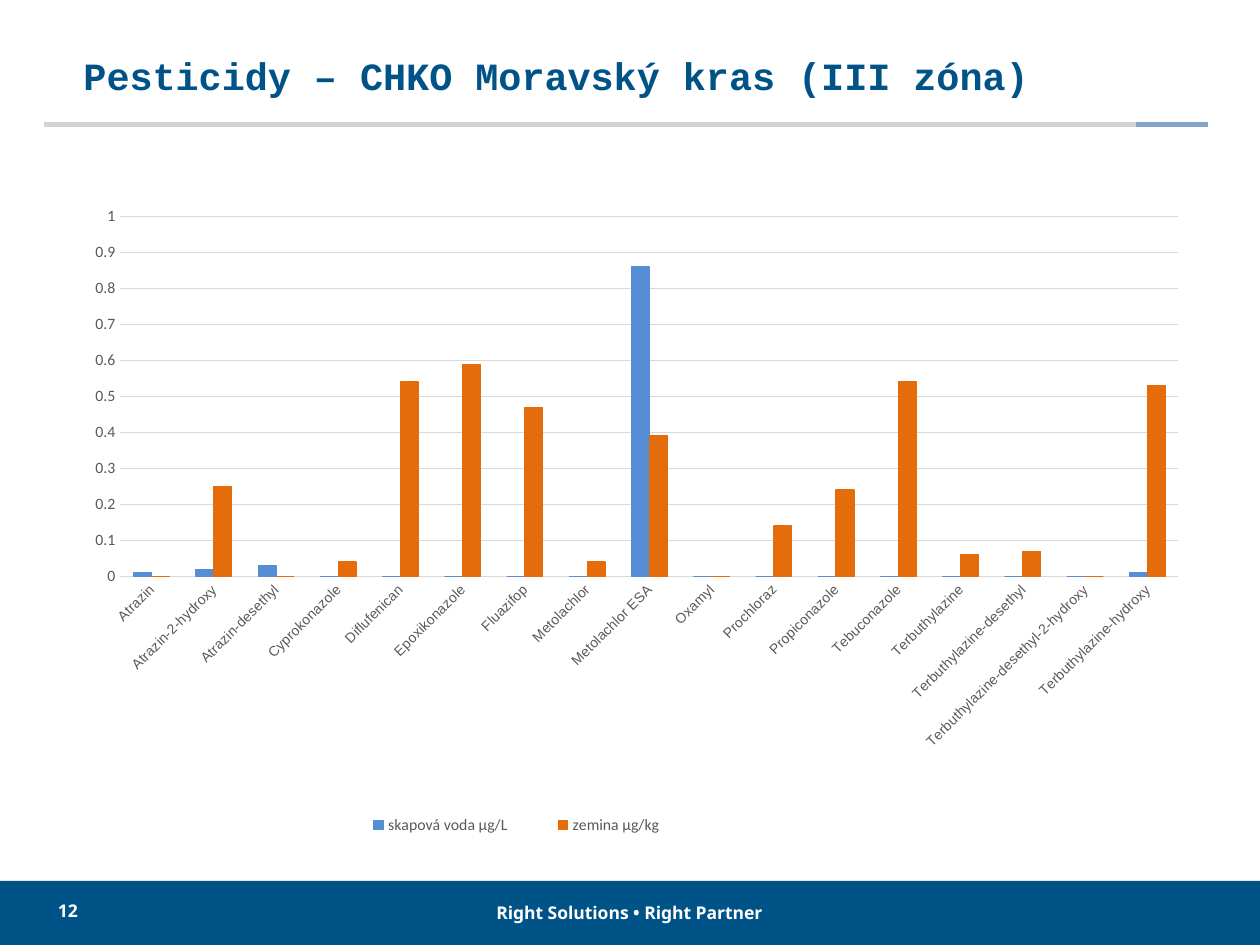
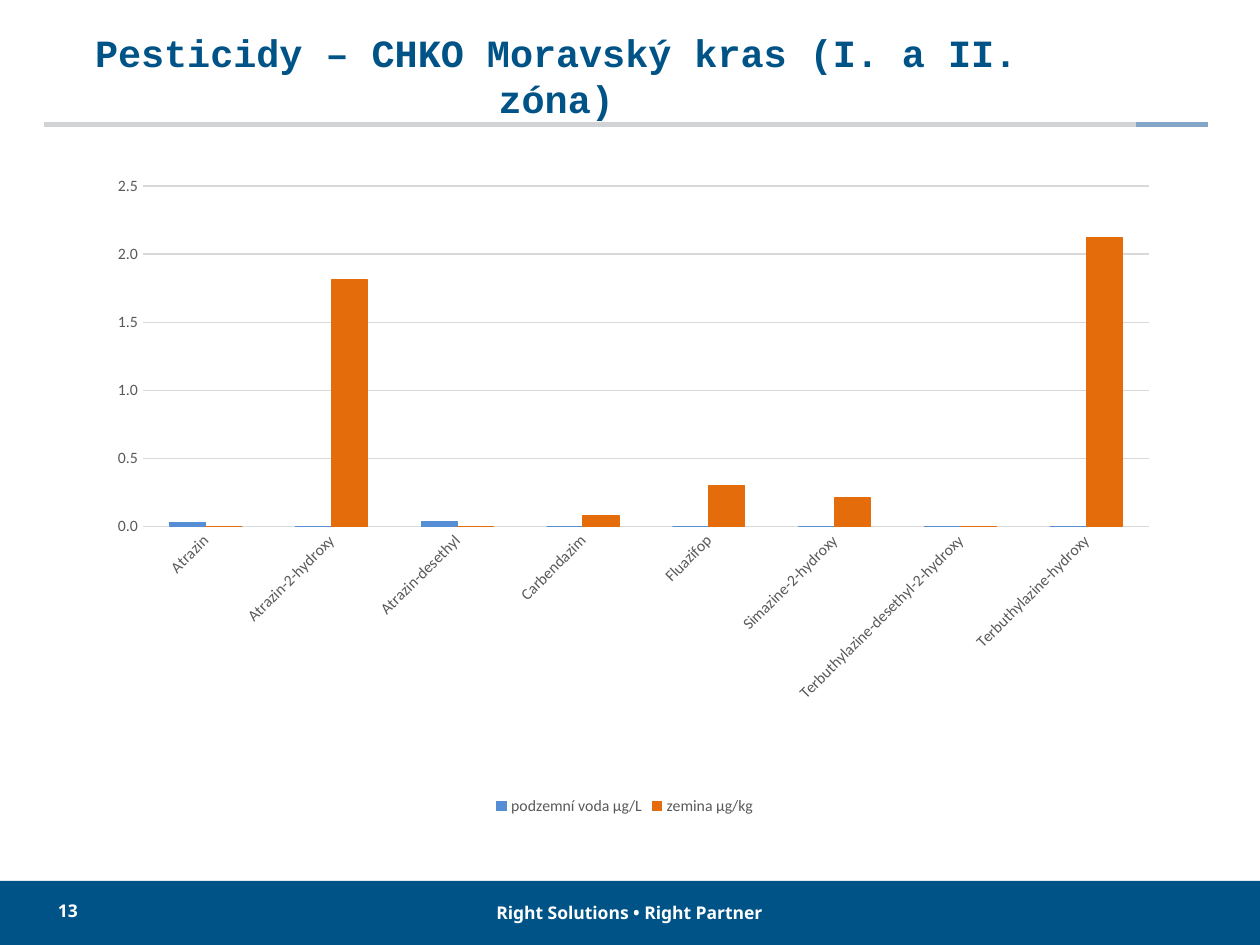
from lxml.etree import SubElement
from pptx import Presentation
from pptx.chart.data import CategoryChartData
from pptx.dml.color import RGBColor
from pptx.enum.chart import XL_CHART_TYPE, XL_LEGEND_POSITION, XL_TICK_MARK
from pptx.enum.shapes import MSO_CONNECTOR, MSO_SHAPE
from pptx.enum.text import MSO_ANCHOR, MSO_AUTO_SIZE, PP_ALIGN
from pptx.oxml import parse_xml
from pptx.oxml.ns import nsdecls, qn
from pptx.util import Inches, Pt

CELL = 0.1  # inches; the slide is 100 columns by 75 rows
COLS, ROWS = 100, 75
HEX = {
    "navy": "005387", "sky": "83A5C8", "rule": "D1D3D4", "white": "FFFFFF",
    "water": "558ED5", "soil": "E46C0A", "label": "595959", "grid": "D9D9D9",
}

ZONE_3 = {
    "Atrazin": (0.01, 0),
    "Atrazin-2-hydroxy": (0.02, 0.25),
    "Atrazin-desethyl": (0.03, 0),
    "Cyprokonazole": (0, 0.04),
    "Diflufenican": (0, 0.54),
    "Epoxikonazole": (0, 0.59),
    "Fluazifop": (0, 0.47),
    "Metolachlor": (0, 0.04),
    "Metolachlor ESA": (0.86, 0.39),
    "Oxamyl": (0, 0),
    "Prochloraz": (0, 0.14),
    "Propiconazole": (0, 0.24),
    "Tebuconazole": (0, 0.54),
    "Terbuthylazine": (0, 0.06),
    "Terbuthylazine-desethyl": (0, 0.07),
    "Terbuthylazine-desethyl-2-hydroxy": (0, 0),
    "Terbuthylazine-hydroxy": (0.01, 0.53),
}
ZONES_1_2 = {
    "Atrazin": (0.03, 0),
    "Atrazin-2-hydroxy": (0, 1.81),
    "Atrazin-desethyl": (0.04, 0),
    "Carbendazim": (0, 0.08),
    "Fluazifop": (0, 0.3),
    "Simazine-2-hydroxy": (0, 0.21),
    "Terbuthylazine-desethyl-2-hydroxy": (0, 0),
    "Terbuthylazine-hydroxy": (0, 2.12),
}


def ink(name):
    return RGBColor.from_string(HEX[name])


def cells(*counts):
    return [Inches(count * CELL) for count in counts]


def style(font, name, size, color, bold=False):
    font.name, font.size, font.bold = name, Pt(size), bold
    font.color.rgb = ink(color)


def place(parent, index, box, inner=False):
    """Fix a chart part at box: left, top, width, height as chart shares."""
    for old in parent.findall(qn("c:layout")):
        parent.remove(old)
    layout = parse_xml(f"<c:layout {nsdecls('c')}><c:manualLayout/></c:layout>")
    parent.insert(index, layout)
    rules = [("layoutTarget", "inner")] if inner else []
    rules += [("xMode", "edge"), ("yMode", "edge"), *zip("xywh", box)]
    for tag, val in rules:
        SubElement(layout[0], qn(f"c:{tag}")).set("val", str(val))


class Deck:
    def __init__(self):
        self.file = Presentation()
        self.file.slide_width, self.file.slide_height = cells(COLS, ROWS)
        self.slide = None

    def start(self, title, page):
        self.slide = self.file.slides.add_slide(self.file.slide_layouts[5])
        self.rule(3.5, 95.9, "rule")
        self.rule(90.2, 95.9, "sky")
        self.band(69.9)
        self.label(str(page), 4.6, 71.4, PP_ALIGN.LEFT)
        self.label("Right Solutions • Right Partner", 35.8, 71.6, PP_ALIGN.CENTER)
        self.title(title)

    def title(self, text):
        shape = self.slide.shapes.title
        shape.left, shape.top, shape.width, shape.height = cells(3.5, 3.6, 81.3, 4.7)
        frame = shape.text_frame
        frame.text = text
        frame.auto_size = MSO_AUTO_SIZE.NONE
        frame.vertical_anchor = MSO_ANCHOR.MIDDLE
        para = frame.paragraphs[0]
        para.alignment = PP_ALIGN.CENTER
        style(para.font, "Courier New", 22, "navy", True)

    def rule(self, left, right, color):
        line = self.slide.shapes.add_connector(
            MSO_CONNECTOR.STRAIGHT, *cells(left, 9.9, right, 9.9))
        line.line.color.rgb = ink(color)
        line.line.width = Pt(3)
        SubElement(line._element.spPr, qn("a:effectLst"))

    def band(self, top):
        shape = self.slide.shapes.add_shape(
            MSO_SHAPE.RECTANGLE, *cells(0, top, COLS, ROWS - top))
        shape.shadow.inherit = False
        shape.fill.solid()
        shape.fill.fore_color.rgb = ink("navy")
        shape.line.fill.background()

    def label(self, text, left, top, align):
        box = self.slide.shapes.add_textbox(*cells(left, top, 28.3, 1.7))
        frame = box.text_frame
        frame.word_wrap = True
        frame.margin_left = frame.margin_right = 0
        frame.margin_top = frame.margin_bottom = 0
        frame.text = text
        para = frame.paragraphs[0]
        para.alignment = align
        style(para.font, "Noto Sans", 10, "white", True)

    def chart(self, box, water, rows, plot, top, step, form, face, size, key=None):
        """Draw water and soil columns; plot and key are shares of the chart."""
        data = CategoryChartData()
        data.categories = list(rows)
        for name, vals in zip((water, "zemina µg/kg"), zip(*rows.values())):
            data.add_series(name, vals)
        chart = self.slide.shapes.add_chart(
            XL_CHART_TYPE.COLUMN_CLUSTERED, *cells(*box), data).chart
        chart.has_title = False
        style(chart.font, "Calibri", 10, "label")
        self.bars(chart.plots[0])
        self.axes(chart, top, step, form, face, size)
        place(chart._chartSpace.chart.plotArea, 0, plot, inner=True)
        chart.has_legend = True
        legend = chart.legend
        legend.position = XL_LEGEND_POSITION.BOTTOM
        legend.include_in_layout = False
        style(legend.font, "Calibri", 9, "label")
        if key:
            place(legend._element, 1, key)

    def bars(self, plot):
        plot.gap_width = 150
        plot.vary_by_categories = False
        for series, color in zip(plot.series, ("water", "soil")):
            series.format.fill.solid()
            series.format.fill.fore_color.rgb = ink(color)
            series.format.line.color.rgb = ink(color)
            series.format.line.width = Pt(0.75)

    def axes(self, chart, top, step, form, face, size):
        names, scale = chart.category_axis, chart.value_axis
        for axis in (names, scale):
            axis.major_tick_mark = axis.minor_tick_mark = XL_TICK_MARK.NONE
            axis.format.line.fill.background()
        style(names.tick_labels.font, face, size, "label")
        names._element.txPr.bodyPr.set("rot", "-2700000")
        style(scale.tick_labels.font, "Calibri", 9, "label")
        scale.minimum_scale, scale.maximum_scale = 0, top
        scale.major_unit = step
        scale.tick_labels.number_format = form
        scale.tick_labels.number_format_is_linked = False
        grid = scale.major_gridlines.format.line
        grid.color.rgb = ink("grid")
        grid.width = Pt(0.75)


def main():
    deck = Deck()
    deck.start("Pesticidy – CHKO Moravský kras (III zóna)", 12)
    deck.chart((4.3, 14.7, 90.6, 54.3), "skapová voda µg/L", ZONE_3,
               plot=(0.058, 0.046, 0.927, 0.526), top=1, step=0.1,
               form="General", face="Arial", size=8, key=(0.24, 0.9, 0.33, 0.07))
    deck.start("Pesticidy – CHKO Moravský kras (I. a II. zóna)", 13)
    deck.chart((6.7, 13.1, 85.8, 52), "podzemní voda µg/L", ZONES_1_2,
               plot=(0.054, 0.032, 0.931, 0.52), top=2.5, step=0.5,
               form="#,##0.0", face="Calibri", size=9)
    deck.file.save("out.pptx")


if __name__ == "__main__":
    main()
